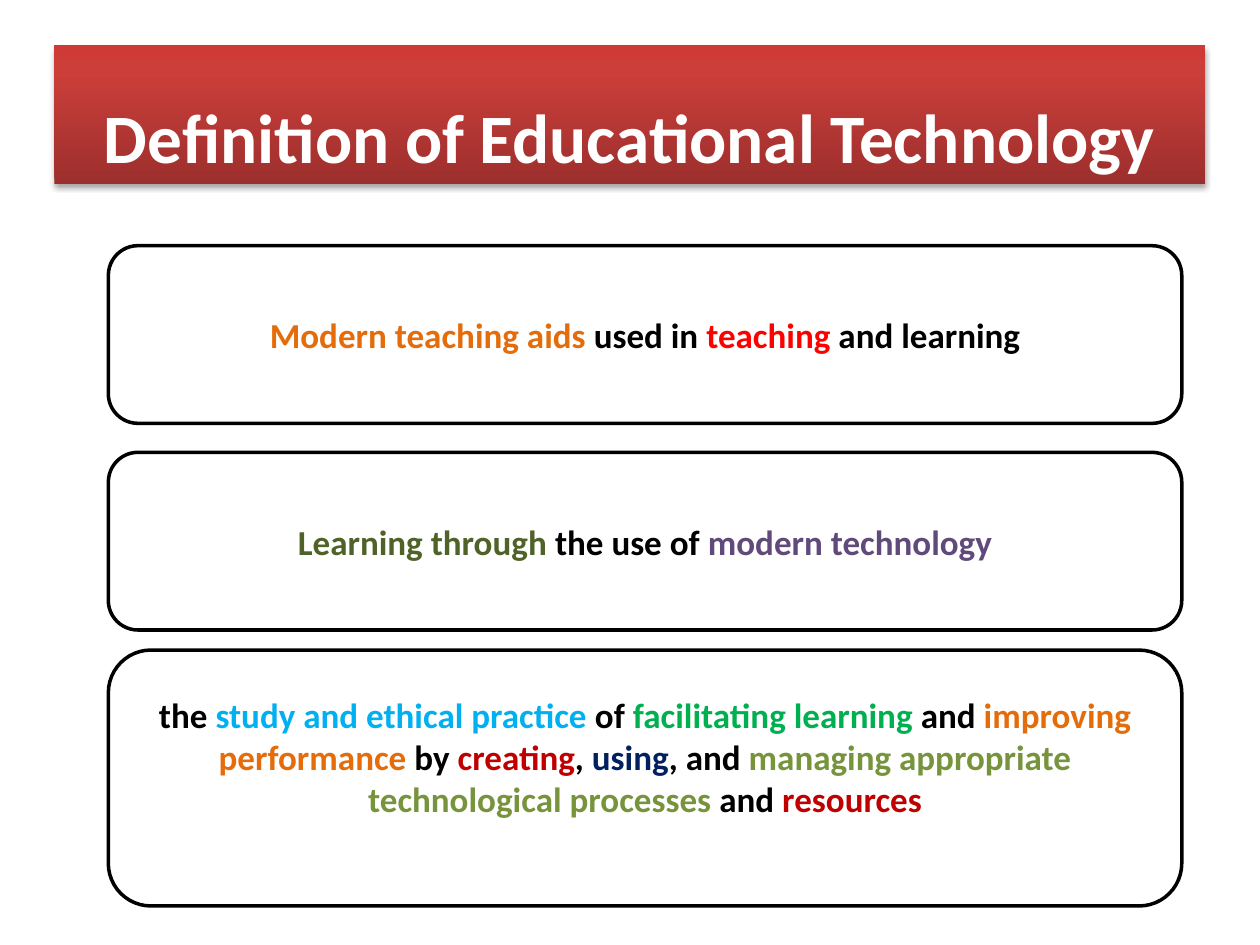
from lxml import etree
from pptx import Presentation
from pptx.dml.color import RGBColor
from pptx.enum.shapes import MSO_SHAPE
from pptx.enum.text import MSO_ANCHOR, PP_ALIGN
from pptx.oxml import parse_xml
from pptx.oxml.ns import qn
from pptx.util import Pt

RECTANGLE = MSO_SHAPE.RECTANGLE
ROUNDED = MSO_SHAPE.ROUNDED_RECTANGLE
MIDDLE = MSO_ANCHOR.MIDDLE
CENTER = PP_ALIGN.CENTER
FONT = "Calibri"
BLACK, WHITE = "000000", "FFFFFF"
ORANGE, RED, DARK_RED = "E46C0A", "FF0000", "C00000"
OLIVE, LIGHT_OLIVE, PURPLE = "4F6228", "77933C", "604A7B"
SKY, GREEN, NAVY = "00B0F0", "00B050", "002060"

TITLE = "Definition of Educational Technology"
TITLE_BOX = (31, 26, 657.5, 79.3)
TITLE_GRADIENT = [(0, "9C2F2D"), (80, "CB3E3A"), (100, "CE3B37")]

CARD_LEFT, CARD_WIDTH = 61.9, 613.4
INSET, LINE_HEIGHT = 3.6, 24
DEFINITIONS = [
    (140.4, 101.5, 0, [
        ("Modern teaching aids ", ORANGE), ("used in ", BLACK),
        ("teaching", RED), (" and learning", BLACK)]),
    (258.5, 101.5, 0, [
        ("Learning through ", OLIVE), ("the use of ", BLACK),
        ("modern technology", PURPLE)]),
    (371.5, 146.2, LINE_HEIGHT, [
        ("the ", BLACK), ("study and ethical practice ", SKY), ("of ", BLACK),
        ("facilitating learning ", GREEN), ("and ", BLACK),
        ("improving performance", ORANGE), (" by ", BLACK),
        ("creating", DARK_RED), (", ", BLACK), ("using", NAVY),
        (", and ", BLACK),
        ("managing appropriate technological processes", LIGHT_OLIVE),
        (" and ", BLACK), ("resources", DARK_RED)]),
]


def color(value):
    return RGBColor.from_string(value)


def add_panel(slide, preset, box, runs, size):
    panel = slide.shapes.add_shape(preset, *[Pt(length) for length in box])
    panel.shadow.inherit = False
    frame = panel.text_frame
    frame.word_wrap = True
    frame.vertical_anchor = MIDDLE
    paragraph = frame.paragraphs[0]
    paragraph.alignment = CENTER
    paragraph.font.name = FONT
    paragraph.font.size = Pt(size)
    paragraph.font.bold = True
    for words, shade in runs:
        run = paragraph.add_run()
        run.text = words
        run.font.color.rgb = color(shade)
    return panel


def set_gradient(panel, stops):
    panel.fill.gradient()
    panel.fill.gradient_angle = 90
    stop_list = panel.fill._fill._gradFill.find(qn("a:gsLst"))
    for stop in list(stop_list):
        stop_list.remove(stop)
    for percent, shade in stops:
        stop = etree.SubElement(stop_list, qn("a:gs"), pos=str(percent * 1000))
        etree.SubElement(stop, qn("a:srgbClr"), val=shade)


def add_shadow(panel):
    effects = panel._element.spPr.find(qn("a:effectLst"))
    effects.append(parse_xml(
        '<a:outerShdw xmlns:a="http://schemas.openxmlformats.org/drawingml/2006/main"'
        f' blurRad="{Pt(3.1)}" dist="{Pt(1.8)}" dir="5400000" rotWithShape="0">'
        f'<a:srgbClr val="{BLACK}"><a:alpha val="35000"/></a:srgbClr></a:outerShdw>'))


def main():
    deck = Presentation()
    deck.slide_width, deck.slide_height = Pt(720), Pt(540)
    slide = deck.slides.add_slide(deck.slide_layouts[6])

    title = add_panel(slide, RECTANGLE, TITLE_BOX, [(TITLE, WHITE)], 39.6)
    title.text_frame.paragraphs[0].line_spacing = 1.5
    title.line.fill.background()
    set_gradient(title, TITLE_GRADIENT)
    add_shadow(title)

    for top, height, space_below, runs in DEFINITIONS:
        card = add_panel(slide, ROUNDED, (CARD_LEFT, top, CARD_WIDTH, height), runs, 20)
        card.fill.solid()
        card.fill.fore_color.rgb = color(WHITE)
        card.line.color.rgb = color(BLACK)
        card.line.width = Pt(2)
        card.text_frame.margin_bottom = Pt(INSET + space_below)

    deck.save("out.pptx")


if __name__ == "__main__":
    main()
